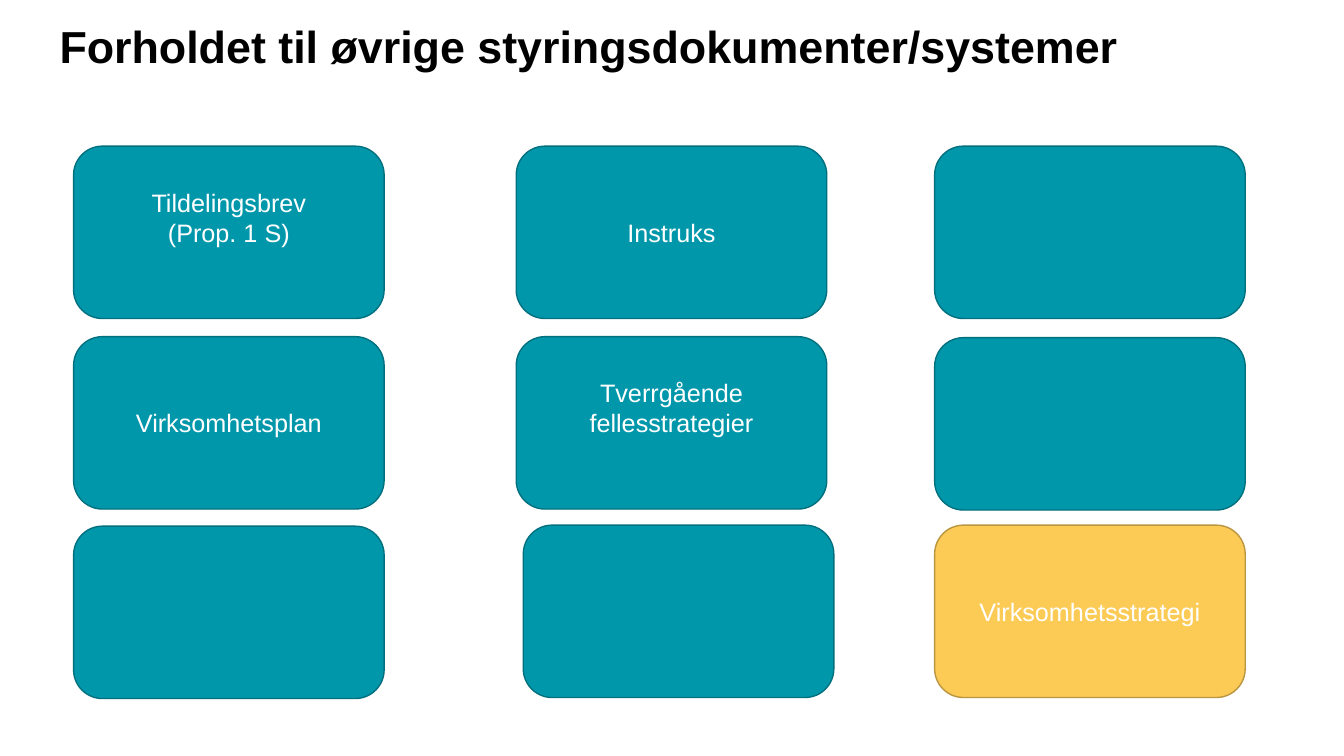
"""Build a slide relating the strategy to other governing documents in a three by three grid."""
from dataclasses import dataclass

from pptx import Presentation
from pptx import util as u
from pptx.dml.color import RGBColor
from pptx.enum import shapes, text


@dataclass(frozen=True)
class Theme:
    font: str = "Arial"
    title_size: int = 32
    box_size: int = 18
    black: str = "000000"
    white: str = "FFFFFF"
    teal: tuple = ("0097AB", "00707F")
    yellow: tuple = ("FCCB56", "BA9640")


theme = Theme()


def add_text(para, words, size, color, bold=False):
    span = para.add_run()
    span.text = words
    span.font.name = theme.font
    span.font.size = u.Pt(size)
    span.font.bold = bold
    span.font.color.rgb = RGBColor.from_string(color)


deck = Presentation()
deck.slide_width, deck.slide_height = u.Inches(13.33), u.Inches(7.5)
page = deck.slides.add_slide(deck.slide_layouts[5])

title = page.shapes.title
title.left, title.top = u.Inches(0.59), u.Inches(0.25)
title.width, title.height = u.Inches(12.13), u.Inches(0.66)
frame = title.text_frame
frame.margin_left = frame.margin_top = frame.margin_right = frame.margin_bottom = 0
frame.auto_size = text.MSO_AUTO_SIZE.NONE
frame.vertical_anchor = text.MSO_ANCHOR.TOP
para = frame.paragraphs[0]
para.alignment = text.PP_ALIGN.LEFT
para.line_spacing = 0.9
add_text(para, "Forholdet til øvrige styringsdokumenter/systemer",
         theme.title_size, theme.black, bold=True)

column_lefts = (0.73, 5.12, 9.27)
row_tops = (1.45, 3.34, 5.21)
box_width, box_height = 3.08, 1.71
raised_bottom = 0.35
nudges = {(1, 2): (0, 0.01), (2, 0): (0, 0.01), (2, 1): (0.07, 0)}
documents = (
    (("Tildelingsbrev", "(Prop. 1 S)"), ("Instruks",), ()),
    (("Virksomhetsplan",), ("Tverrgående fellesstrategier",), ()),
    ((), (), ("Virksomhetsstrategi",)),
)
raised = {(0, 0), (1, 1)}
highlighted = (2, 2)

for row, top in enumerate(row_tops):
    for column, left in enumerate(column_lefts):
        cell = (row, column)
        shift_x, shift_y = nudges.get(cell, (0, 0))
        box = page.shapes.add_shape(
            shapes.MSO_SHAPE.ROUNDED_RECTANGLE,
            u.Inches(left + shift_x), u.Inches(top + shift_y),
            u.Inches(box_width), u.Inches(box_height))
        fill, line = theme.yellow if cell == highlighted else theme.teal
        box.shadow.inherit = False
        box.fill.solid()
        box.fill.fore_color.rgb = RGBColor.from_string(fill)
        box.line.color.rgb = RGBColor.from_string(line)
        box.line.width = u.Pt(1)
        frame = box.text_frame
        frame.word_wrap = True
        frame.vertical_anchor = text.MSO_ANCHOR.MIDDLE
        if cell in raised:
            frame.margin_bottom = u.Inches(raised_bottom)
        for index, words in enumerate(documents[row][column]):
            para = frame.add_paragraph() if index else frame.paragraphs[0]
            para.alignment = text.PP_ALIGN.CENTER
            add_text(para, words, theme.box_size, theme.white)

deck.save("out.pptx")
